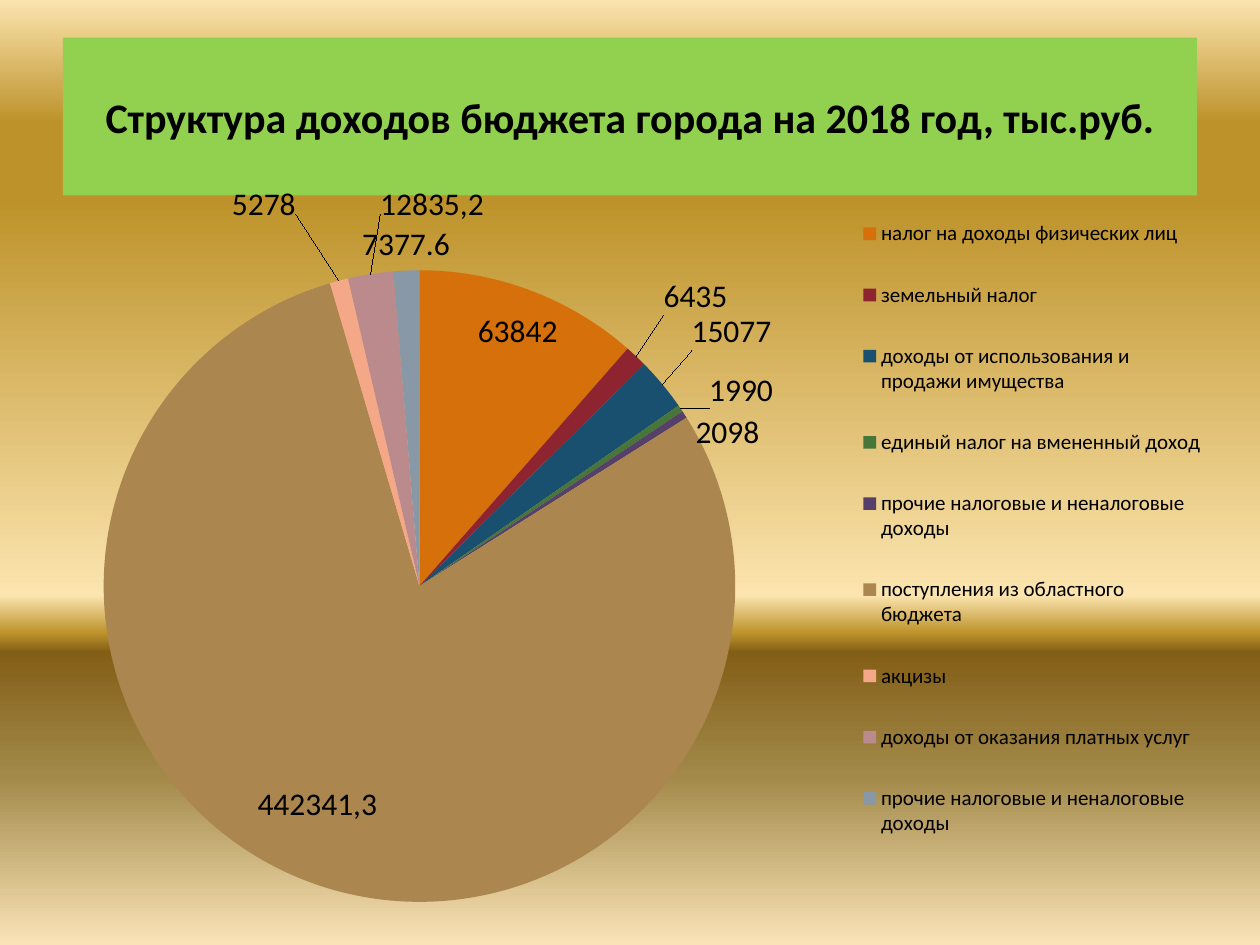
"""Build a slide with a pie chart of the city's budget income for 2018."""
from dataclasses import dataclass
from typing import Any

from lxml.etree import SubElement
from pptx import Presentation
from pptx.chart.data import CategoryChartData as Data
from pptx.dml.color import RGBColor
from pptx.enum.chart import XL_CHART_TYPE as Kind
from pptx.enum.chart import XL_LABEL_POSITION as Spot
from pptx.enum.chart import XL_LEGEND_POSITION as Side
from pptx.enum.shapes import MSO_SHAPE as Form
from pptx.enum.text import MSO_ANCHOR as Anchor
from pptx.enum.text import PP_ALIGN as Align
from pptx.oxml import parse_xml
from pptx.oxml.ns import nsdecls, qn
from pptx.util import Cm, Pt

FACE = "Calibri"
BLACK = "000000"
STOPS = (
    (0, "FBE4AE"), (13, "BD922A"), (21, "BD922A"), (63, "FBE4AE"),
    (67, "BD922A"), (69, "835E17"), (82, "A28949"), (100, "FAE3B7"),
)


@dataclass
class Slice:
    name: str
    value: float
    color: str
    label: str = ""
    dx: float = 0
    dy: float = 0
    inside: bool = False


SLICES = (
    Slice("налог на доходы физических лиц", 63842, "D5700A", "63842", 2.5, 2, True),
    Slice("земельный налог", 6435, "8D2430", "6435", 1.9, -4.9),
    Slice("доходы от использования и продажи имущества", 15077, "194F6F", "15077", 2, -3.9),
    Slice("единый налог на вмененный доход", 1990, "467639", "1990", 1.9, 0.7),
    Slice("прочие налоговые и неналоговые доходы", 2098, "564069", "2098", 0.4, 5.6),
    Slice("поступления из областного бюджета", 442341.3, "AB864F", "442341,3", -4.5, -7, True),
    Slice("акцизы", 5278, "F4A888", "5278", -3.5, -8.1),
    Slice("доходы от оказания платных услуг", 12835.2, "BA8A8C", "12835,2", 9.7, -7.1),
    Slice("прочие налоговые и неналоговые доходы", 7377.6, "8998A7"),
)


def rgb(color: str) -> RGBColor:
    return RGBColor.from_string(color)


def style(font: Any, size: float, bold: bool = False, color: str = BLACK) -> None:
    font.name, font.size, font.bold = FACE, Pt(size), bold
    font.color.rgb = rgb(color)


def write(frame: Any, text: str, *, size: float, bold: bool = False) -> None:
    par = frame.paragraphs[0]
    par.alignment = Align.CENTER
    run = par.add_run()
    run.text = text
    style(run.font, size, bold)


def layout(**parts: Any) -> Any:
    root = parse_xml(f"<c:layout {nsdecls('c')}><c:manualLayout/></c:layout>")
    for tag, val in parts.items():
        text = val if isinstance(val, str) else f"{val / 100:.3f}"
        SubElement(root[0], qn(f"c:{tag}")).set("val", text)
    return root


def paint(slide: Any) -> None:
    fill = slide.background.fill
    fill.gradient()
    fill.gradient_angle = 270
    stops = slide.element.find(".//" + qn("a:gsLst"))
    for old in list(stops):
        stops.remove(old)
    for place, color in STOPS:
        stop = SubElement(stops, qn("a:gs"), pos=str(place * 1000))
        SubElement(stop, qn("a:srgbClr"), val=color)


def add_title(slide: Any, text: str) -> None:
    box = slide.shapes.add_shape(Form.RECTANGLE, Cm(1.27), Cm(0.76), Cm(22.86), Cm(3.18))
    box.shadow.inherit = False
    box.fill.solid()
    box.fill.fore_color.rgb = rgb("92D050")
    box.line.fill.background()
    frame = box.text_frame
    frame.word_wrap = True
    frame.vertical_anchor = Anchor.MIDDLE
    write(frame, text, size=24, bold=True)


def mark(point: Any, item: Slice) -> None:
    point.format.fill.solid()
    point.format.fill.fore_color.rgb = rgb(item.color)
    label = point.data_label
    if item.label:
        write(label.text_frame, item.label, size=18)
    else:
        style(label.font, 18)
    label.position = Spot.INSIDE_END if item.inside else Spot.OUTSIDE_END


def add_pie(slide: Any) -> None:
    data = Data()
    data.categories = [item.name for item in SLICES]
    data.add_series("Series 1", [item.value for item in SLICES])
    chart = slide.shapes.add_chart(
        Kind.PIE, Cm(0.71), Cm(3.73), Cm(23.8), Cm(14.81), data
    ).chart
    style(chart.font, 18)
    chart.has_title = False
    chart.has_legend = True
    legend = chart.legend
    legend.position = Side.CORNER
    legend.include_in_layout = False
    style(legend.font, 12)
    plot = chart.plots[0]
    plot.vary_by_categories = True
    series = plot.series[0]
    series.data_labels.show_value = True
    for num, item in enumerate(SLICES):
        mark(series.points[num], item)

    root = chart.element
    for old in root.findall(".//" + qn("c:layout")):
        old.getparent().remove(old)
    for node, item in zip(root.iter(qn("c:dLbl")), SLICES):
        if item.dx or item.dy:
            node.insert(1, layout(x=item.dx, y=item.dy))
    area = root.find(".//" + qn("c:plotArea"))
    area.insert(0, layout(layoutTarget="inner", xMode="edge", yMode="edge",
                          x=5.8, y=11.6, w=53.5, h=86))
    key = root.find(".//" + qn("c:legend"))
    key.insert(1, layout(xMode="edge", yMode="edge", x=70.3, y=0, w=28.6, h=93.5))


def main() -> None:
    deck = Presentation()
    deck.slide_width, deck.slide_height = Cm(25.4), Cm(19.05)
    slide = deck.slides.add_slide(deck.slide_layouts[6])
    paint(slide)
    add_title(slide, "Структура доходов бюджета города на 2018 год, тыс.руб.")
    add_pie(slide)
    deck.save("out.pptx")


if __name__ == "__main__":
    main()
